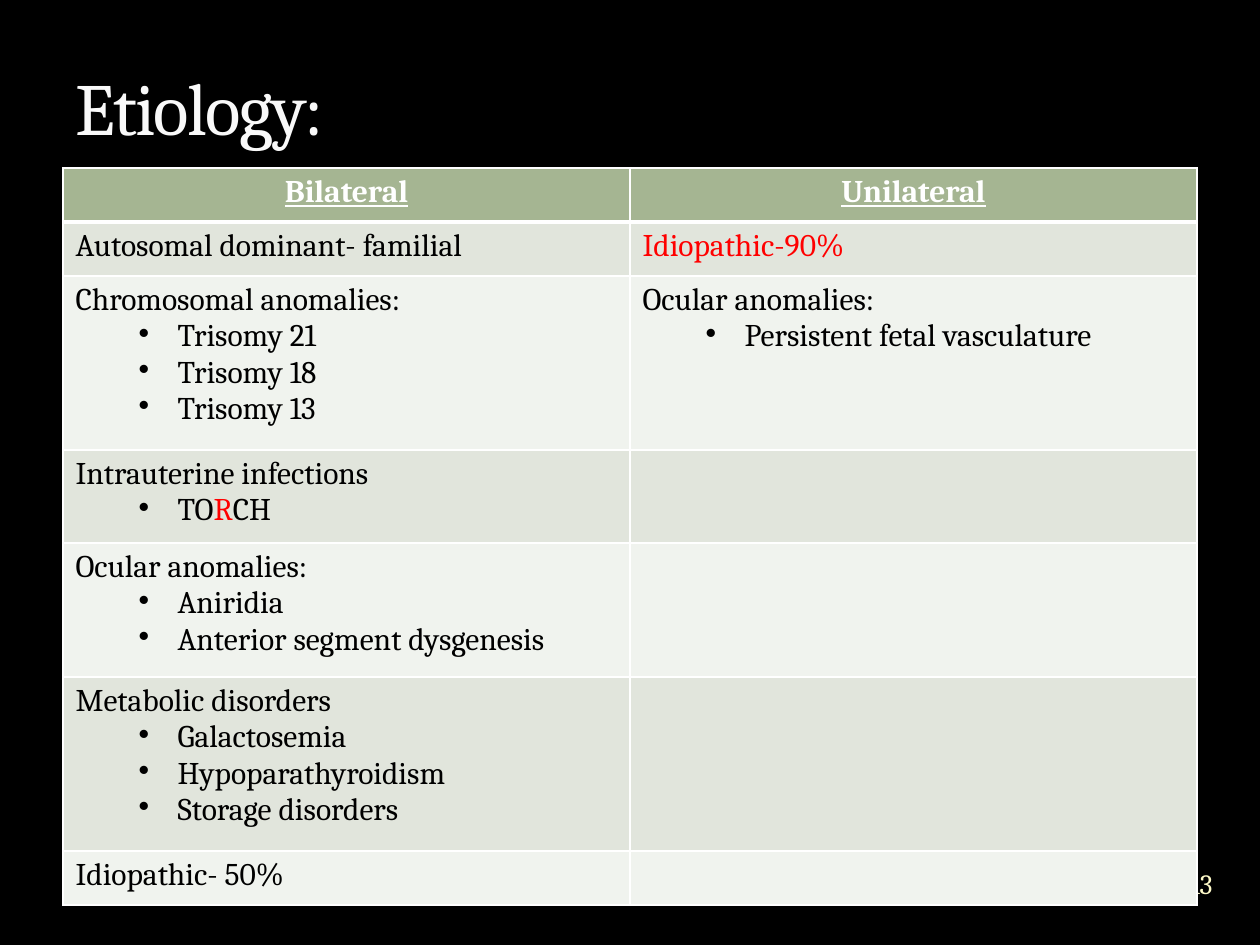
from dataclasses import dataclass
from typing import NamedTuple

from lxml import etree
from pptx import Presentation, util as u
from pptx.dml.color import RGBColor
from pptx.enum import text as t
from pptx.oxml.ns import qn


def px(n: int) -> u.Emu:
    """Pixels at 126 to the inch."""
    return u.Emu(round(n * 914400 / 126))


@dataclass(frozen=True)
class Theme:
    font: str = "Cambria"
    back: str = "000000"
    title: str = "F9F9F9"
    number: str = "FEFAC9"
    line: str = "FFFFFF"
    ink: str = "000000"
    alert: str = "FF0000"
    head: str = "A5B592"
    bands: tuple = ("E1E5DC", "F0F3EE")
    big: int = 42
    body: int = 18
    small: int = 16


THEME = Theme()


class Run(NamedTuple):
    text: str
    color: str = THEME.ink
    bold: bool = False


class Para(NamedTuple):
    runs: list[Run]
    bullet: bool = False


class Row(NamedTuple):
    height: int
    left: list[Para]
    right: list[Para]


def topic(text: str, *items: str, color: str = THEME.ink) -> list[Para]:
    return [Para([Run(text, color)])] + [Para([Run(i)], True) for i in items]


# Content
HEADS = ("Bilateral", "Unilateral")
TORCH = Para([Run("TO"), Run("R", THEME.alert), Run("CH")], True)
ROWS = [
    Row(54, topic("Autosomal dominant- familial"),
        topic("Idiopathic-90%", color=THEME.alert)),
    Row(174, topic("Chromosomal anomalies:", "Trisomy 21", "Trisomy 18", "Trisomy 13"),
        topic("Ocular anomalies:", "Persistent fetal vasculature")),
    Row(93, topic("Intrauterine infections") + [TORCH], []),
    Row(134, topic("Ocular anomalies:", "Aniridia", "Anterior segment dysgenesis"), []),
    Row(174, topic("Metabolic disorders", "Galactosemia", "Hypoparathyroidism",
                   "Storage disorders"), []),
    Row(54, topic("Idiopathic- 50%"), []),
]
HEAD_H = 54


def add_run(para, run: Run, size: int):
    r = para.add_run()
    r.text = run.text
    r.font.name = THEME.font
    r.font.size = u.Pt(size)
    r.font.bold = run.bold
    r.font.color.rgb = RGBColor.from_string(run.color)
    return r


def add_bullet(para) -> None:
    para.level = 1
    props = para._p.get_or_add_pPr()
    props.set("marL", str(px(102)))
    props.set("indent", str(-px(39)))
    etree.SubElement(props, qn("a:buChar")).set("char", "•")


def style_cell(cell, fill: str, top: int, bottom: int) -> None:
    cell.fill.solid()
    cell.fill.fore_color.rgb = RGBColor.from_string(fill)
    props = cell._tc.get_or_add_tcPr()
    edges = {"L": 1, "R": 1, "T": top, "B": bottom}
    for i, (side, width) in enumerate(edges.items()):
        line = etree.Element(qn(f"a:ln{side}"), w=str(u.Pt(width)))
        paint = etree.SubElement(line, qn("a:solidFill"))
        etree.SubElement(paint, qn("a:srgbClr")).set("val", THEME.line)
        props.insert(i, line)


def fill_cell(cell, paras: list[Para]) -> None:
    frame = cell.text_frame
    for i, item in enumerate(paras):
        para = frame.add_paragraph() if i else frame.paragraphs[0]
        if item.bullet:
            add_bullet(para)
        for run in item.runs:
            add_run(para, run, THEME.body)


def add_title(slide, text: str) -> None:
    title = slide.shapes.title
    title.left, title.top, title.width, title.height = map(px, (63, 21, 1134, 136))
    frame = title.text_frame
    frame.vertical_anchor = t.MSO_ANCHOR.BOTTOM
    para = frame.paragraphs[0]
    para.alignment = t.PP_ALIGN.LEFT
    run = add_run(para, Run(text, THEME.title), THEME.big)
    run.font._element.set("spc", "-100")


def add_number(slide, text: str) -> None:
    box = slide.shapes.add_textbox(*map(px, (1159, 852, 84, 63)))
    frame = box.text_frame
    frame.word_wrap = True
    frame.vertical_anchor = t.MSO_ANCHOR.MIDDLE
    frame.margin_left = frame.margin_right = frame.margin_top = frame.margin_bottom = 0
    para = frame.paragraphs[0]
    para.alignment = t.PP_ALIGN.CENTER
    add_run(para, Run(text, THEME.number), THEME.small)


def add_grid(slide) -> None:
    total = HEAD_H + sum(row.height for row in ROWS)
    table = slide.shapes.add_table(
        len(ROWS) + 1, len(HEADS), *map(px, (63, 168, 1134, total))).table
    table.first_row = table.horz_banding = False

    # Header row
    table.rows[0].height = px(HEAD_H)
    for col, text in enumerate(HEADS):
        cell = table.cell(0, col)
        style_cell(cell, THEME.head, 1, 3)
        para = cell.text_frame.paragraphs[0]
        para.alignment = t.PP_ALIGN.CENTER
        add_run(para, Run(text, THEME.line, True), THEME.body).font.underline = True

    # Banded body rows
    for i, row in enumerate(ROWS):
        table.rows[i + 1].height = px(row.height)
        for col, paras in enumerate((row.left, row.right)):
            cell = table.cell(i + 1, col)
            style_cell(cell, THEME.bands[i % 2], 1 if i else 3, 1)
            fill_cell(cell, paras)


def main() -> None:
    deck = Presentation()
    deck.slide_width, deck.slide_height = px(1260), px(945)
    slide = deck.slides.add_slide(deck.slide_layouts[5])
    back = slide.background.fill
    back.solid()
    back.fore_color.rgb = RGBColor.from_string(THEME.back)
    add_title(slide, "Etiology:")
    add_number(slide, "13")  # the table overlaps the number
    add_grid(slide)
    deck.save("out.pptx")


if __name__ == "__main__":
    main()
